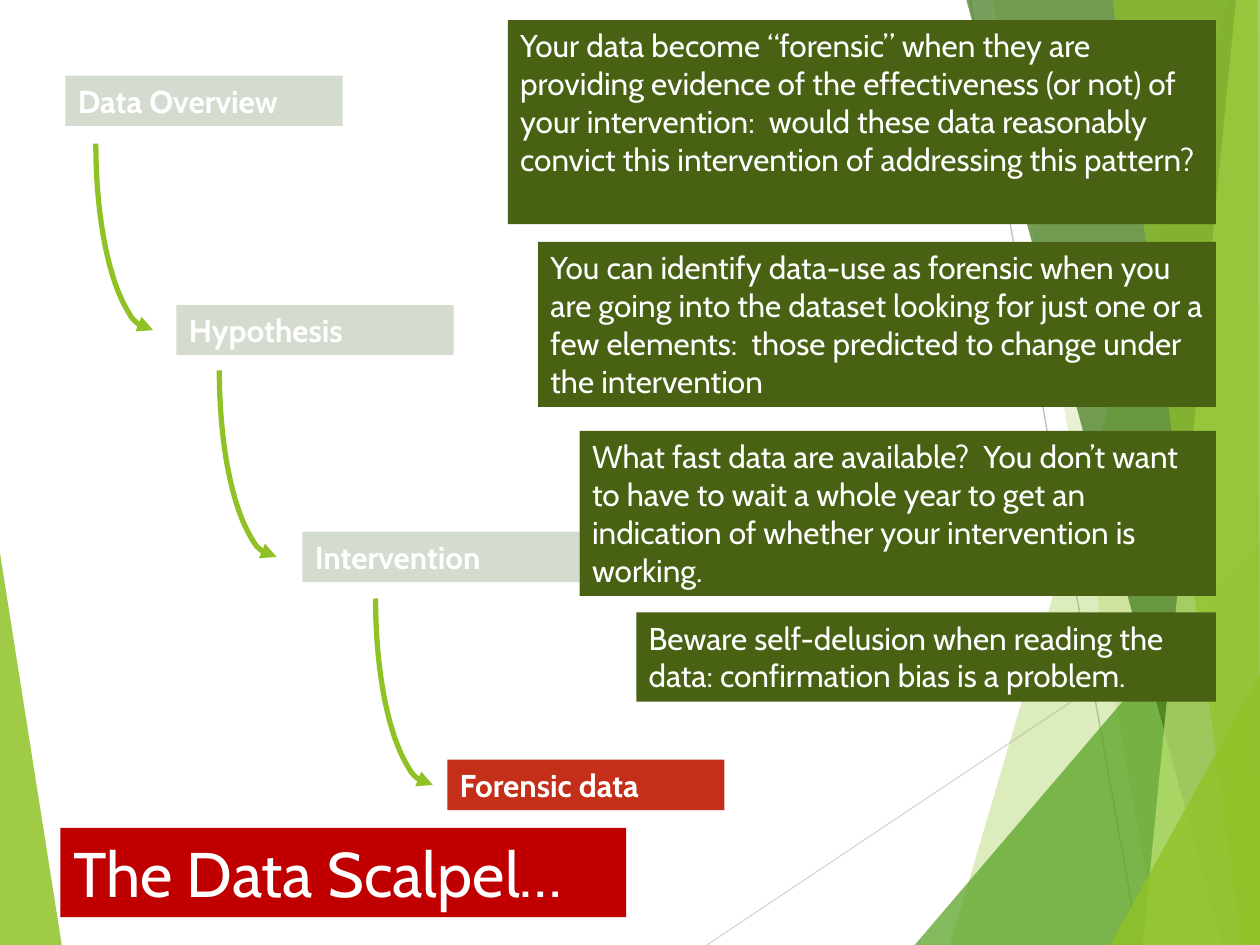
from dataclasses import dataclass
from typing import NamedTuple

import lxml.etree
import pptx
import pptx.dml.color
import pptx.enum.shapes
import pptx.enum.text
import pptx.oxml.ns
import pptx.util

Inches = pptx.util.Inches
Shapes = pptx.enum.shapes.MSO_SHAPE
qn = pptx.oxml.ns.qn


@dataclass(frozen=True)
class Theme:
    font: str = "Cabin"
    title_size: int = 36
    body_size: int = 18
    white: str = "FFFFFF"
    title_fill: str = "C00000"
    active_fill: str = "C42F1A"
    step_fill: str = "2A5010"
    note_fill: str = "486113"
    lime: str = "90C226"
    green: str = "54A021"
    forest: str = "3F7819"
    pale: str = "C0E474"
    light_gray: str = "D9D9D9"
    mid_gray: str = "BFBFBF"


THEME = Theme()


class Facet(NamedTuple):
    points: tuple
    color: str
    opacity: int


class Rule(NamedTuple):
    start: tuple
    end: tuple
    color: str


class Step(NamedTuple):
    text: str
    left: float
    top: float
    veil: tuple | None = None  # left and top of the fading cover
    arrow: tuple | None = None  # left and top of the arc to the next step


class Note(NamedTuple):
    text: str
    left: float
    top: float
    height: float


NOTE_RIGHT = 9.65
STEP_SIZE = (2.2, 0.4)
VEIL_SIZE = (2.39, 0.61)
ARC_SIZE = (0.91, 2.96)

LEFT_FACET = Facet(((0, 4.39), (0.49, 7.5), (0, 7.5)), THEME.lime, 85)
RULES = [
    Rule((5.61, 7.5), (10, 4.57), THEME.light_gray),
    Rule((7.7, 0), (9.04, 7.5), THEME.mid_gray),
]
RIGHT_FACETS = [
    Facet(((9.75, 0), (7.54, 7.5), (10, 7.5), (10, 0)), THEME.lime, 30),
    Facet(((7.88, 0), (9.19, 7.5), (10, 7.5), (10, 0)), THEME.lime, 20),
    Facet(((7.26, 7.5), (10, 4.29), (10, 7.5)), THEME.green, 72),
    Facet(((7.67, 0), (9.7, 7.5), (10, 7.5), (10, 0)), THEME.forest, 70),
    Facet(((9.81, 0), (9.07, 7.5), (10, 7.5), (10, 0)), THEME.pale, 70),
    Facet(((8.83, 0), (9.86, 7.5), (10, 7.5), (9.98, 0)), THEME.lime, 65),
    Facet(((8.81, 7.5), (10, 5.35), (10, 7.5)), THEME.lime, 80),
]
STEPS = [
    Step("Data Overview", 0.52, 0.6, (0.48, 0.49), (0.76, -0.34)),
    Step("Hypothesis", 1.4, 2.42, (1.28, 2.34), (1.74, 1.46)),
    Step("Intervention", 2.4, 4.22, (2.3, 4.15), (2.98, 3.27)),
    Step("Forensic data", 3.55, 6.03),
]
NOTES = [
    Note("Your data become “forensic” when they are providing evidence of the "
         "effectiveness (or not) of your intervention:  would these data reasonably "
         "convict this intervention of addressing this pattern?", 4.03, 0.16, 1.62),
    Note("You can identify data-use as forensic when you are going into the dataset "
         "looking for just one or a few elements:  those predicted to change under "
         "the intervention", 4.27, 1.92, 1.31),
    Note("What fast data are available?  You don’t want to have to wait a whole year "
         "to get an indication of whether your intervention is working.",
         4.6, 3.42, 1.31),
    Note("Beware self-delusion when reading the data: confirmation bias is a problem.",
         5.05, 4.86, 0.71),
]


def rgb(color: str) -> pptx.dml.color.RGBColor:
    return pptx.dml.color.RGBColor.from_string(color)


def paint(shape, color: str, opacity: int = 100) -> None:
    """Give a shape a solid fill, with no outline or shadow."""
    shape.shadow.inherit = False
    shape.line.fill.background()
    shape.fill.solid()
    shape.fill.fore_color.rgb = rgb(color)
    if opacity < 100:
        tint = shape._element.spPr.find(qn("a:solidFill")).find(qn("a:srgbClr"))
        lxml.etree.SubElement(tint, qn("a:alpha"), val=str(opacity * 1000))


def write(shape, text: str, size: int, bold: bool = False) -> None:
    frame = shape.text_frame
    frame.word_wrap = True
    frame.auto_size = pptx.enum.text.MSO_AUTO_SIZE.NONE
    frame.vertical_anchor = pptx.enum.text.MSO_ANCHOR.TOP
    frame.text = text
    para = frame.paragraphs[0]
    para.alignment = pptx.enum.text.PP_ALIGN.LEFT
    para.font.name = THEME.font
    para.font.size = pptx.util.Pt(size)
    para.font.bold = bold
    para.font.color.rgb = rgb(THEME.white)


def add_shape(page, kind, left: float, top: float, width: float, height: float):
    return page.shapes.add_shape(
        kind, Inches(left), Inches(top), Inches(width), Inches(height))


def add_facet(page, facet: Facet) -> None:
    corners = [(Inches(x), Inches(y)) for x, y in facet.points]
    builder = page.shapes.build_freeform(*corners[0])
    builder.add_line_segments(corners[1:], close=True)
    paint(builder.convert_to_shape(), facet.color, facet.opacity)


def add_rule(page, rule: Rule) -> None:
    line = page.shapes.add_connector(
        pptx.enum.shapes.MSO_CONNECTOR.STRAIGHT,
        *(Inches(value) for value in rule.start + rule.end))
    line.line.color.rgb = rgb(rule.color)
    line.line.width = pptx.util.Pt(0.75)
    lxml.etree.SubElement(line._element.spPr, qn("a:effectLst"))


def add_step(page, step: Step) -> None:
    box = add_shape(page, Shapes.RECTANGLE, step.left, step.top, *STEP_SIZE)
    paint(box, THEME.step_fill if step.veil else THEME.active_fill)
    write(box, step.text, THEME.body_size, bold=True)
    if step.veil:
        veil = add_shape(page, Shapes.RECTANGLE, *step.veil, *VEIL_SIZE)
        paint(veil, THEME.white, 80)


def add_arrow(page, left: float, top: float) -> None:
    arc = add_shape(page, Shapes.ARC, left, top, *ARC_SIZE)
    arc.rotation = 180
    arc.shadow.inherit = False
    arc.fill.background()
    arc.line.color.rgb = rgb(THEME.lime)
    arc.line.width = pptx.util.Pt(3)
    outline = arc._element.spPr.find(qn("a:ln"))
    lxml.etree.SubElement(outline, qn("a:headEnd"), type="triangle")


def add_note(page, note: Note) -> None:
    box = add_shape(page, Shapes.RECTANGLE, note.left, note.top,
                    NOTE_RIGHT - note.left, note.height)
    paint(box, THEME.note_fill)
    write(box, note.text, THEME.body_size)


def set_title(page, text: str) -> None:
    title = page.shapes.title
    title.left, title.top = Inches(0.48), Inches(6.57)
    title.width, title.height = Inches(4.49), Inches(0.71)
    title.fill.solid()
    title.fill.fore_color.rgb = rgb(THEME.title_fill)
    write(title, text, THEME.title_size)


def main() -> None:
    deck = pptx.Presentation()
    deck.slide_width, deck.slide_height = Inches(10), Inches(7.5)
    page = deck.slides.add_slide(deck.slide_layouts.get_by_name("Title Only"))
    set_title(page, "The Data Scalpel…")

    # Background facets and thin rules
    add_facet(page, LEFT_FACET)
    for rule in RULES:
        add_rule(page, rule)
    for facet in RIGHT_FACETS:
        add_facet(page, facet)

    # Staircase of steps, then the arrows between them
    for step in STEPS:
        add_step(page, step)
    for step in STEPS:
        if step.arrow:
            add_arrow(page, *step.arrow)

    # Explanations on the right
    for note in NOTES:
        add_note(page, note)

    deck.save("out.pptx")


if __name__ == "__main__":
    main()
